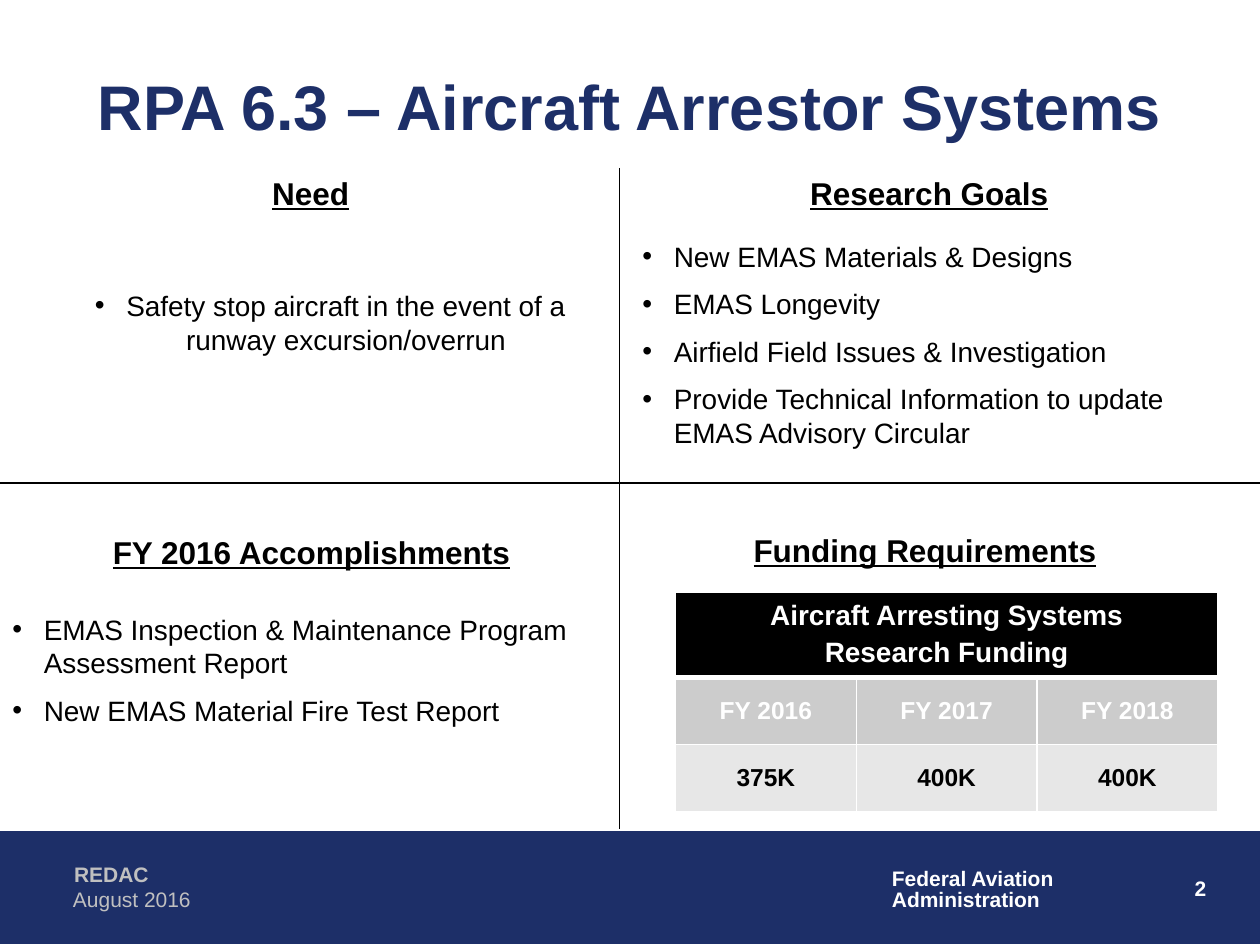
from dataclasses import dataclass

from lxml.etree import SubElement
from pptx import Presentation
from pptx.dml.color import RGBColor
from pptx.enum.shapes import MSO_CONNECTOR, MSO_SHAPE
from pptx.enum.text import MSO_ANCHOR, PP_ALIGN
from pptx.oxml.ns import qn
from pptx.util import Pt

NAVY = RGBColor(0x1D, 0x2F, 0x68)
BLACK = RGBColor(0, 0, 0)
WHITE = RGBColor(0xFF, 0xFF, 0xFF)
SILVER = RGBColor(0xC0, 0xC0, 0xC0)
GRAY = RGBColor(0xCC, 0xCC, 0xCC)
PALE = RGBColor(0xE7, 0xE7, 0xE7)
LEFT, MID, RIGHT = PP_ALIGN.LEFT, PP_ALIGN.CENTER, PP_ALIGN.RIGHT


@dataclass
class Style:
    size: float
    color: RGBColor = BLACK
    bold: bool = False
    under: bool = False
    align: PP_ALIGN = LEFT
    gap: float = 0
    line: float = 1
    bullet: bool = False


@dataclass
class Label:
    lines: list[str]
    box: tuple[float, float, float, float]
    style: Style
    wrap: bool = True
    anchor: MSO_ANCHOR = MSO_ANCHOR.TOP


TITLE = Style(36, NAVY, bold=True, align=MID)
HEAD = Style(18, bold=True, under=True, align=MID)
LIST = Style(16, gap=8, bullet=True)
NEED = Style(16, align=MID, bullet=True)

LABELS = [
    Label(["2"], (546.5, 496.8, 149.8, 36), Style(12, WHITE, bold=True, align=RIGHT)),
    Label(["Federal Aviation", "Administration"], (502.6, 493.2, 108, 31.7),
          Style(12, WHITE, bold=True, line=0.85), wrap=False),
    Label(["REDAC"], (35.3, 488.9, 376.6, 21.6), Style(12, SILVER, bold=True)),
    Label(["August 2016"], (34.6, 502.8, 294.5, 21.6), Style(12, SILVER)),
    Label(["RPA 6.3 – Aircraft Arrestor Systems"], (26, 36, 667.4, 48.2), TITLE,
          anchor=MSO_ANCHOR.MIDDLE),
    Label(["Need"], (39.6, 96, 275.8, 24), HEAD),
    Label(["Research Goals"], (378, 96, 306, 24), HEAD),
    Label(["FY 2016 Accomplishments"], (28, 301, 300, 27.4), HEAD),
    Label(["Funding Requirements"], (369.5, 300, 318.2, 39), HEAD),
    Label(["Safety stop aircraft in the event of a runway excursion/overrun"],
          (23.8, 161.3, 329.8, 46), NEED),
    Label(["New EMAS Materials & Designs", "EMAS Longevity",
           "Airfield Field Issues & Investigation",
           "Provide Technical Information to update EMAS Advisory Circular"],
          (360, 133.2, 347.8, 158.4), LIST),
    Label(["EMAS Inspection & Maintenance Program Assessment Report",
           "New EMAS Material Fire Test Report"], (0, 346.3, 354, 75), LIST),
]


def write(frame, lines: list[str], style: Style) -> None:
    frame.text = "\n".join(lines)
    for i, para in enumerate(frame.paragraphs):
        if style.bullet:
            props = para._p.get_or_add_pPr()
            props.set("marL", str(Pt(18)))
            props.set("indent", str(-Pt(18)))
            SubElement(props, qn("a:buFont"), typeface="Arial")
            SubElement(props, qn("a:buChar"), char="•")
        para.alignment = style.align
        para.line_spacing = style.line
        para.space_before = Pt(style.gap if i else 0)
        for run in para.runs:
            font = run.font
            font.name = "Arial"
            font.size = Pt(style.size)
            font.bold = style.bold
            font.underline = style.under
            font.color.rgb = style.color


def add_label(slide, label: Label) -> None:
    frame = slide.shapes.add_textbox(*map(Pt, label.box)).text_frame
    frame.word_wrap = label.wrap
    frame.vertical_anchor = label.anchor
    write(frame, label.lines, label.style)


def add_rule(slide, x1: float, y1: float, x2: float, y2: float) -> None:
    rule = slide.shapes.add_connector(MSO_CONNECTOR.STRAIGHT, *map(Pt, (x1, y1, x2, y2)))
    rule.line.color.rgb = BLACK
    rule.line.width = Pt(0.75)
    SubElement(rule._element.spPr, qn("a:effectLst"))


def add_footer(slide) -> None:
    bar = slide.shapes.add_shape(MSO_SHAPE.RECTANGLE, *map(Pt, (0, 475.2, 720, 64.1)))
    bar.shadow.inherit = False
    bar.fill.solid()
    bar.fill.fore_color.rgb = NAVY
    bar.line.color.rgb = NAVY
    bar.line.width = Pt(0.75)


def edge(cell, thick: dict[str, float]) -> None:
    """Draw white borders 1 pt wide, or as wide as thick says for a side."""
    props = cell._tc.get_or_add_tcPr()
    for i, side in enumerate(("lnL", "lnR", "lnT", "lnB")):
        line = props.makeelement(qn(f"a:{side}"), {"w": str(Pt(thick.get(side, 1)))})
        fill = SubElement(line, qn("a:solidFill"))
        SubElement(fill, qn("a:srgbClr"), val=str(WHITE))
        props.insert(i, line)


def fill_cell(cell, lines: list[str], style: Style, color: RGBColor) -> None:
    cell.fill.solid()
    cell.fill.fore_color.rgb = color
    cell.vertical_anchor = MSO_ANCHOR.MIDDLE
    write(cell.text_frame, lines, style)


def add_funds(slide) -> None:
    table = slide.shapes.add_table(3, 3, *map(Pt, (386, 338.2, 310, 125.5))).table
    for col in table.columns:
        col.width = Pt(103.3)
    for row, height in zip(table.rows, (48.5, 38.5, 38.5)):
        row.height = Pt(height)
    table.cell(0, 0).merge(table.cell(0, 2))
    fill_cell(table.cell(0, 0), ["Aircraft Arresting Systems", "Research Funding"],
              Style(16, WHITE, bold=True, align=MID, gap=3.2), BLACK)
    rows = [(["FY 2016", "FY 2017", "FY 2018"], WHITE, GRAY),
            (["375K", "400K", "400K"], BLACK, PALE)]
    for r, (texts, ink, back) in enumerate(rows, 1):
        style = Style(14, ink, bold=True, align=MID)
        for c, text in enumerate(texts):
            fill_cell(table.cell(r, c), [text], style, back)
    for r in range(3):
        thick = {0: {"lnB": 3}, 1: {"lnT": 3}}.get(r, {})
        for c in range(3):
            edge(table.cell(r, c), thick)


def main() -> None:
    deck = Presentation()
    deck.slide_width, deck.slide_height = Pt(720), Pt(540)
    slide = deck.slides.add_slide(deck.slide_layouts[6])
    add_footer(slide)
    add_rule(slide, 354, 96, 354, 474)
    add_rule(slide, 0, 276, 720, 276)
    for label in LABELS:
        add_label(slide, label)
    add_funds(slide)
    deck.save("out.pptx")


if __name__ == "__main__":
    main()
